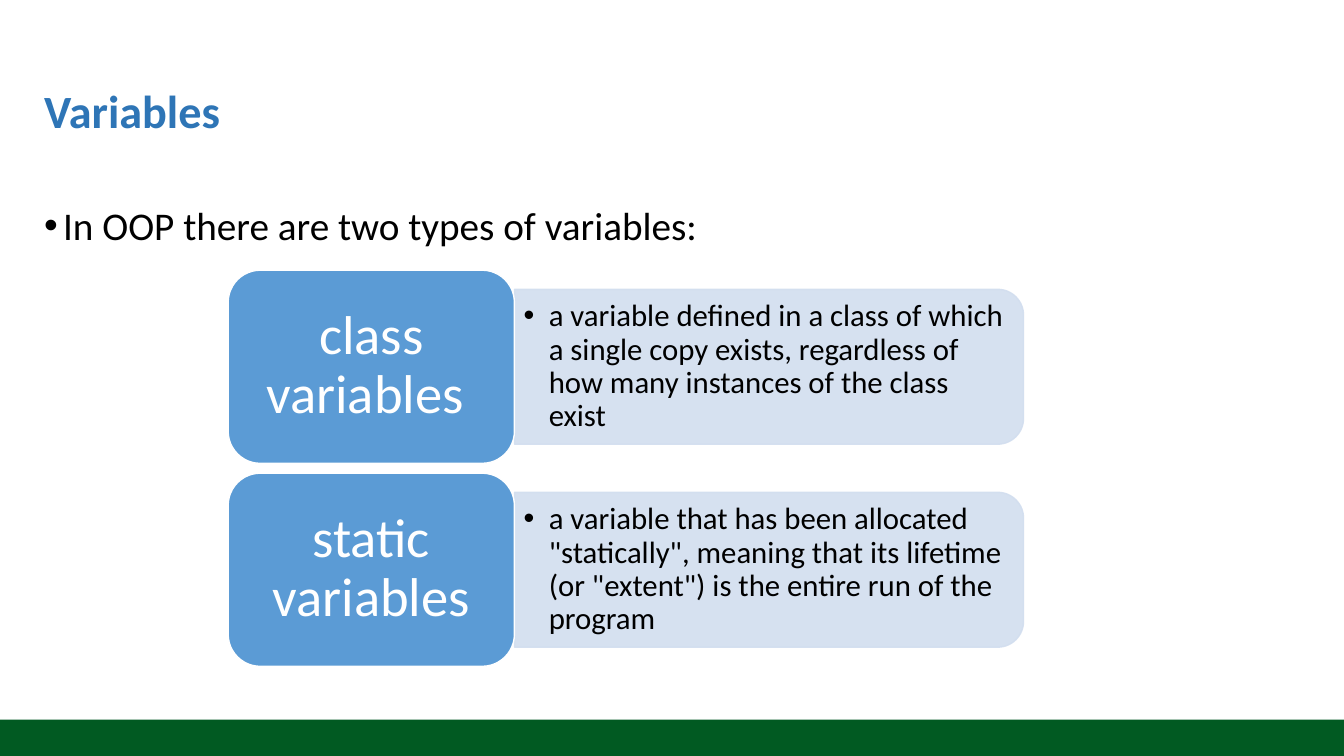
from math import cos, pi, sin

from lxml.etree import SubElement
from pptx import Presentation
from pptx.dml.color import RGBColor
from pptx.enum.shapes import MSO_SHAPE as Shape
from pptx.enum.text import MSO_ANCHOR as Anchor, PP_ALIGN as Align
from pptx.oxml.ns import qn
from pptx.util import Pt

COLORS = {
    "footer": "015A22",
    "title": "2E75B6",
    "text": "000000",
    "term": "5B9BD5",
    "definition": "D2DEEF",
    "white": "FFFFFF",
}


def paint(shape, fill, line=None):
    """Set the fill and outline of a shape and drop its shadow."""
    shape.shadow.inherit = False
    shape.fill.solid()
    shape.fill.fore_color.rgb = RGBColor.from_string(COLORS[fill])
    if line:
        shape.line.color.rgb = RGBColor.from_string(COLORS[line])
        shape.line.width = Pt(1)
    else:
        shape.line.fill.background()


def write(shape, text, size, color, margins=(7.2, 3.6, 7.2, 3.6),
          anchor=Anchor.MIDDLE, align=Align.LEFT, bold=False, indent=0):
    """Fill a shape with one paragraph; an indent gives it a bullet."""
    frame = shape.text_frame
    left, top, right, bottom = map(Pt, margins)
    frame_format = {
        "word_wrap": True, "vertical_anchor": anchor,
        "margin_left": left, "margin_top": top,
        "margin_right": right, "margin_bottom": bottom,
    }
    for name, value in frame_format.items():
        setattr(frame, name, value)

    paragraph = frame.paragraphs[0]
    paragraph.alignment = align
    paragraph.line_spacing = 0.9
    if indent:
        properties = paragraph._p.get_or_add_pPr()
        properties.set("marL", str(Pt(indent)))
        properties.set("indent", str(-Pt(indent)))
        SubElement(properties, qn("a:buFont")).set("typeface", "Arial")
        SubElement(properties, qn("a:buChar")).set("char", "•")

    run = paragraph.add_run()
    run.text = text
    for name, value in {"name": "Calibri", "size": Pt(size), "bold": bold}.items():
        setattr(run.font, name, value)
    run.font.color.rgb = RGBColor.from_string(COLORS[color])


presentation = Presentation()
presentation.slide_width, presentation.slide_height = Pt(960), Pt(540)
slide = presentation.slides.add_slide(presentation.slide_layouts[6])
shapes = slide.shapes

# Footer bar
footer = shapes.add_shape(Shape.RECTANGLE, Pt(0), Pt(514), Pt(960), Pt(26))
paint(footer, "footer")

# Title and lead-in
title = shapes.add_textbox(Pt(24.5), Pt(28.8), Pt(913), Pt(104.4))
write(title, "Variables", 33, "title", bold=True)
body = shapes.add_textbox(Pt(24.5), Pt(144), Pt(913), Pt(388.8))
write(body, "In OOP there are two types of variables:", 28, "text",
      anchor=Anchor.TOP, indent=13.5)

# Each term with its definition
VARIABLES = [
    ("class variables ",
     "a variable defined in a class of which a single copy exists, "
     "regardless of how many instances of the class exist"),
    ("static variables",
     'a variable that has been allocated "statically", meaning that its '
     'lifetime (or "extent") is the entire run of the program'),
]
TERM_LEFT, TERM_TOP, TERM_WIDTH, TERM_HEIGHT = 163, 193, 204.5, 138
ROW_PITCH = 145
PANEL_WIDTH, PANEL_HEIGHT, RADIUS = 363.6, 110.6, 18.4
ARC_STEPS = 16

for row, (term, definition) in enumerate(VARIABLES):
    top = TERM_TOP + row * ROW_PITCH

    # Definition panel, rounded on its right side only
    left = TERM_LEFT + TERM_WIDTH
    right = left + PANEL_WIDTH
    panel_top = top + (TERM_HEIGHT - PANEL_HEIGHT) / 2
    panel_bottom = panel_top + PANEL_HEIGHT
    outline = []
    for center_y, start in ((panel_top + RADIUS, -pi / 2), (panel_bottom - RADIUS, 0)):
        for step in range(ARC_STEPS + 1):
            angle = start + step / ARC_STEPS * pi / 2
            outline.append((Pt(right - RADIUS + RADIUS * cos(angle)),
                            Pt(center_y + RADIUS * sin(angle))))
    outline.append((Pt(left), Pt(panel_bottom)))
    builder = shapes.build_freeform(Pt(left), Pt(panel_top))
    builder.add_line_segments(outline, close=True)
    panel = builder.convert_to_shape()
    paint(panel, "definition", "definition")
    for color in panel._element.spPr.iter(qn("a:srgbClr")):
        SubElement(color, qn("a:alpha")).set("val", "90000")
    write(panel, definition, 22, "text", (6.5, 8.6, 12.2, 8.6), indent=18)

    # Term box
    box = shapes.add_shape(Shape.ROUNDED_RECTANGLE, Pt(TERM_LEFT), Pt(top),
                           Pt(TERM_WIDTH), Pt(TERM_HEIGHT))
    paint(box, "term", "white")
    # The preset insets its text by the corner, so these margins are smaller
    write(box, term, 39, "white", (12, 5.5, 12, 5.5), align=Align.CENTER)

presentation.save("out.pptx")
